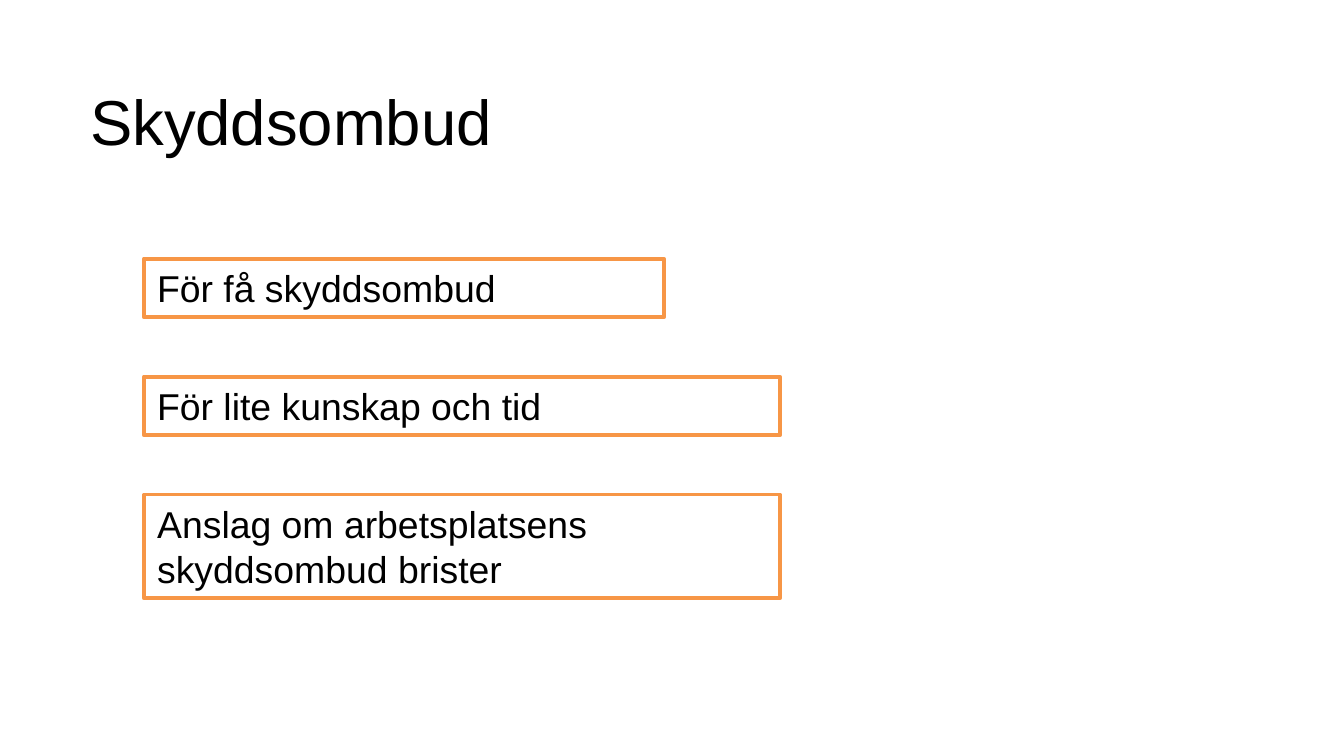
from dataclasses import dataclass

from pptx import Presentation
from pptx import util as u
from pptx.dml.color import RGBColor
from pptx.enum import shapes, text


@dataclass(frozen=True)
class Theme:
    font: str = "Arial"
    ink: RGBColor = RGBColor(0, 0, 0)
    paper: RGBColor = RGBColor(0xFF, 0xFF, 0xFF)
    accent: RGBColor = RGBColor(0xF7, 0x96, 0x46)
    title_size: int = 34
    box_size: int = 20
    border: int = 2


class Deck:
    def __init__(self, theme, width, height):
        self.theme = theme
        self.prs = Presentation()
        self.prs.slide_width, self.prs.slide_height = u.Cm(width), u.Cm(height)
        self.s = self.prs.slides.add_slide(self.prs.slide_layouts[5])
        self.s.background.fill.solid()
        self.s.background.fill.fore_color.rgb = theme.paper

    def set_text(self, sp, words, size, anchor):
        tf = sp.text_frame
        tf.text = words
        tf.word_wrap = True
        tf.vertical_anchor = anchor
        p = tf.paragraphs[0]
        p.alignment = text.PP_ALIGN.LEFT
        for r in p.runs:
            r.font.name = self.theme.font
            r.font.size = u.Pt(size)
            r.font.color.rgb = self.theme.ink

    def title(self, words, left, top, width, height):
        sp = self.s.shapes.title
        sp.left, sp.top, sp.width, sp.height = map(u.Cm, (left, top, width, height))
        self.set_text(sp, words, self.theme.title_size, text.MSO_ANCHOR.MIDDLE)

    def box(self, words, left, top, width, height):
        sp = self.s.shapes.add_shape(
            shapes.MSO_SHAPE.RECTANGLE, *map(u.Cm, (left, top, width, height)))
        sp.shadow.inherit = False
        sp.fill.solid()
        sp.fill.fore_color.rgb = self.theme.paper
        sp.line.color.rgb = self.theme.accent
        sp.line.width = u.Pt(self.theme.border)
        self.set_text(sp, words, self.theme.box_size, text.MSO_ANCHOR.TOP)
        sp.text_frame.auto_size = text.MSO_AUTO_SIZE.SHAPE_TO_FIT_TEXT


def main():
    deck = Deck(Theme(), 25.4, 14.29)
    deck.title("Skyddsombud", 1.45, 1.3, 22.73, 1.93)

    left, first_top, pitch = 2.72, 4.89, 2.23
    problems = [
        ("För få skyddsombud", 9.83, 1.11),
        ("För lite kunskap och tid", 12.02, 1.11),
        ("Anslag om arbetsplatsens skyddsombud brister", 12.02, 1.96),
    ]
    for i, (words, width, height) in enumerate(problems):
        deck.box(words, left, first_top + i * pitch, width, height)

    deck.prs.save("out.pptx")


if __name__ == "__main__":
    main()
